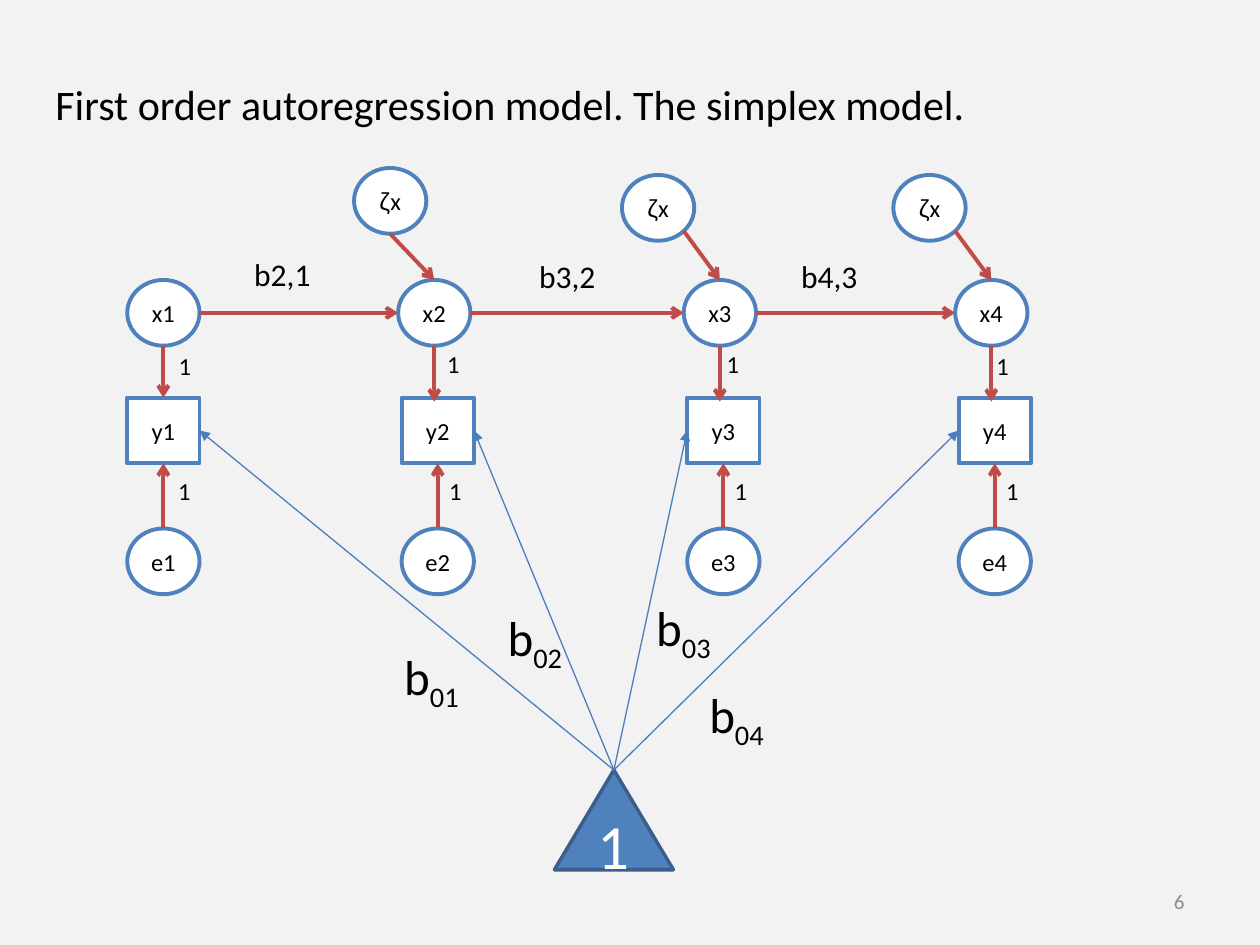
from pptx import Presentation
from pptx.dml.color import RGBColor
from pptx.enum import shapes as sh, text as tx
from pptx.oxml import ns
from pptx.util import Pt
from lxml import etree

BLACK = RGBColor(0, 0, 0)
WHITE = RGBColor(255, 255, 255)
BLUE = RGBColor(0x4F, 0x81, 0xBD)
NAVY = RGBColor(0x3A, 0x5F, 0x8C)
SKY = RGBColor(0x4B, 0x7E, 0xBC)
RED = RGBColor(0xBF, 0x4C, 0x48)
GREY = RGBColor(0x8C, 0x8C, 0x8C)
PALE = RGBColor(0xF2, 0xF2, 0xF2)
WIDE, HIGH = 41.3, 37.6
OVAL, RECT = sh.MSO_SHAPE.OVAL, sh.MSO_SHAPE.RECTANGLE


def write(para, word, size, color=BLACK, font="Calibri", base=None):
    """Add one run to a paragraph."""
    run = para.add_run()
    run.text = word
    run.font.size, run.font.name = Pt(size), font
    run.font.color.rgb = color
    if base:
        run._r.get_or_add_rPr().set("baseline", str(base))


def label(slide, left, top, wide, high, word, size, sub=""):
    """Place a line of text with an optional subscript."""
    frame = slide.shapes.add_textbox(
        Pt(left), Pt(top), Pt(wide), Pt(high)).text_frame
    frame.word_wrap = False
    frame.auto_size = tx.MSO_AUTO_SIZE.SHAPE_TO_FIT_TEXT
    write(frame.paragraphs[0], word, size)
    if sub:
        write(frame.paragraphs[0], sub, size, base=-25000)


def node(slide, kind, left, top, runs, wide=WIDE, high=HIGH, size=14,
         fill=WHITE, line=BLUE, width=2.25, color=BLACK):
    """Draw a shape with centred text from (word, font) runs."""
    shape = slide.shapes.add_shape(
        kind, Pt(left), Pt(top), Pt(wide), Pt(high))
    shape.shadow.inherit = False
    shape.fill.solid()
    shape.fill.fore_color.rgb = fill
    shape.line.color.rgb, shape.line.width = line, Pt(width)
    frame = shape.text_frame
    frame.margin_left = frame.margin_right = 0
    frame.word_wrap = False
    frame.vertical_anchor = tx.MSO_ANCHOR.MIDDLE
    para = frame.paragraphs[0]
    para.alignment = tx.PP_ALIGN.CENTER
    for word, font in runs:
        write(para, word, size, color, font)
    return shape


def arrow(slide, start, end, color=RED, width=2.25, head="arrow"):
    """Draw a straight arrow between two points."""
    line = slide.shapes.add_connector(
        sh.MSO_CONNECTOR.STRAIGHT, *(Pt(n) for n in (*start, *end)))
    line.line.color.rgb, line.line.width = color, Pt(width)
    tail = etree.SubElement(line.line._get_or_add_ln(), ns.qn("a:tailEnd"))
    tail.set("type", head)
    etree.SubElement(line._element.spPr, ns.qn("a:effectLst"))
    return line


def column(slide, left, top, index, shift, gap, drop):
    """Stack the x, y and e nodes of one time point and return y."""
    mid, low = left + WIDE / 2, left + shift
    node(slide, OVAL, left, top, [(f"x{index}", "Calibri")])
    box = node(slide, RECT, low, top + 67.2, [(f"y{index}", "Calibri")])
    node(slide, OVAL, low, top + 142, [(f"e{index}", "Calibri")])
    down = arrow(slide, (mid, top + HIGH), (mid, top + 69.5))
    if not shift:
        down.end_connect(box, 0)
    up = arrow(slide, (mid + shift, top + 142), (mid + shift, top + 105))
    up.end_connect(box, 2)
    label(slide, left + gap, top + drop, 23, 25, "1", 14)
    label(slide, left + 22, top + 108.3, 23, 25, "1", 14)
    return box


def shock(slide, left, top, goal, exit):
    """Draw a disturbance node with its arrow to the goal."""
    node(slide, OVAL, left, top, [("ζ", "Arial"), ("x", "Calibri")])
    arrow(slide, (left + exit[0], top + exit[1]), goal)


def chain(slide, top):
    """Draw the four time points, their paths and shocks; return the y boxes."""
    lefts = (72.7, 227.5, 390.7, 545.8)
    parts = ((0, 22.3, 37.3), (2, 20.9, 35.8), (2, 17.5, 35.8), (2, 16.5, 37.3))
    boxes = [column(slide, left, top, i, *part)
             for i, (left, part) in enumerate(zip(lefts, parts), 1)]
    for i, (spot, rise) in enumerate(((138.2, 18), (301, 16.7), (450.7, 16.7))):
        mid = top + HIGH / 2
        arrow(slide, (lefts[i] + WIDE, mid), (lefts[i + 1], mid))
        label(slide, spot, top - rise, 49, 30, f"b{i + 2},{i + 1}", 18)
    side = (35.3, 32)
    exits = ((-25.2, -64, (WIDE / 2, HIGH)), (-35.3, -60, side), (-35.3, -60, side))
    for left, (over, rise, exit) in zip(lefts[1:], exits):
        shock(slide, left + over, top + rise, (left + WIDE / 2, top), exit)
    return boxes


def means(slide, left, top, boxes):
    """Draw the constant triangle and its paths to the y boxes."""
    peak = node(slide, sh.MSO_SHAPE.ISOSCELES_TRIANGLE, left, top,
                [("1", "Calibri")], 68, 57, 36, BLUE, NAVY, 2, WHITE)
    spots = ((-92.9, -74.2), (-33.8, -96.5), (51.1, -102.2), (81.4, -52.6))
    for i, (box, (over, rise)) in enumerate(zip(boxes, spots), 1):
        ray = arrow(slide, (0, 0), (0, 0), SKY, 0.75, "triangle")
        ray.begin_connect(peak, 0)
        ray.end_connect(box, 3 if i < 3 else 1)
        label(slide, left + over, top + rise, 49, 41, "b", 28, f"0{i}")


def title(slide, left, top, wide, high):
    """Place and format the slide title."""
    head = slide.shapes.title
    head.left, head.top, head.width, head.height = map(Pt, (left, top, wide, high))
    frame = head.text_frame
    frame.auto_size = tx.MSO_AUTO_SIZE.NONE
    frame.word_wrap = False
    frame.vertical_anchor = tx.MSO_ANCHOR.TOP
    frame.paragraphs[0].alignment = tx.PP_ALIGN.LEFT
    write(frame.paragraphs[0],
          "First order autoregression model. The simplex model.", 24)


def number(slide, left, top, wide, high):
    """Place the page number."""
    frame = slide.shapes.add_textbox(
        Pt(left), Pt(top), Pt(wide), Pt(high)).text_frame
    frame.word_wrap = True
    frame.vertical_anchor = tx.MSO_ANCHOR.MIDDLE
    frame.paragraphs[0].alignment = tx.PP_ALIGN.RIGHT
    write(frame.paragraphs[0], "6", 12, GREY)


def main():
    """Build the slide and save it."""
    deck = Presentation()
    deck.slide_width, deck.slide_height = Pt(720), Pt(540)
    slide = deck.slides.add_slide(deck.slide_layouts[5])
    slide.background.fill.solid()
    slide.background.fill.fore_color.rgb = PALE
    title(slide, 24.5, 41, 538.6, 36)
    boxes = chain(slide, 160)
    means(slide, 316.8, 440, boxes)
    number(slide, 516, 500.5, 168, 28.75)
    deck.save("out.pptx")


if __name__ == "__main__":
    main()
